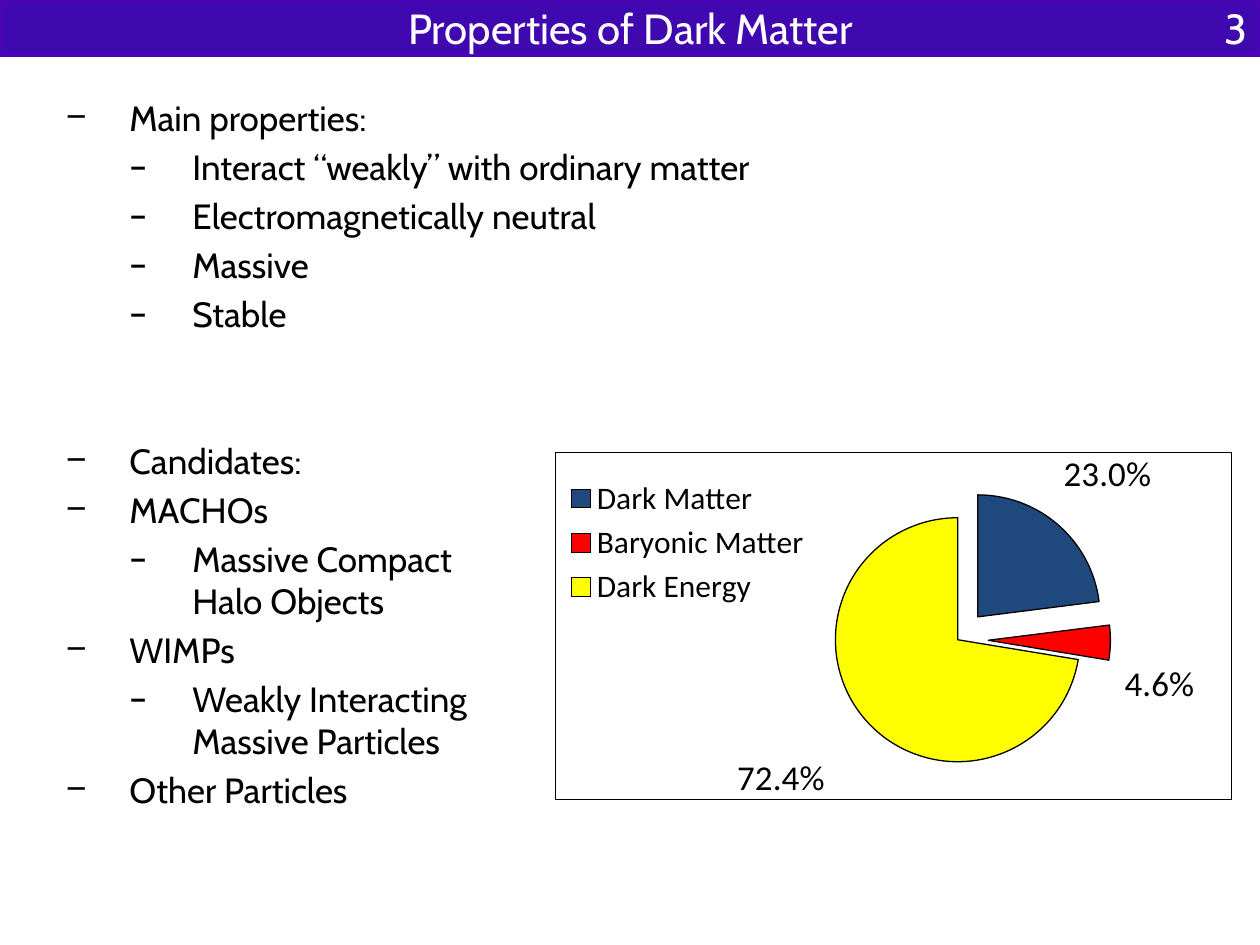
from lxml import etree
from pptx import Presentation, util as u
from pptx.chart.data import CategoryChartData
from pptx.dml.color import RGBColor
from pptx.enum import chart as ch, shapes, text
from pptx.oxml import parse_xml
from pptx.oxml.ns import nsdecls, qn

PX = 914400 // 126
C = {"bar": "4009AF", "edge": "4B03B5", "white": "FFFFFF", "black": "000000",
     "matter": "1F497D", "baryonic": "FF0000", "energy": "FFFF00"}


def add_text(box, lines, size, color, align, anchor=text.MSO_ANCHOR.TOP):
    """Text box from (level, text) pairs; level None means no bullet."""
    tf = s.shapes.add_textbox(*[v * PX for v in box]).text_frame
    tf.word_wrap = True
    tf.vertical_anchor = anchor
    for i, (level, line) in enumerate(lines):
        p = tf.paragraphs[0] if i == 0 else tf.add_paragraph()
        p.text = line
        p.alignment = align
        if i:
            p.space_before = u.Pt(4)
        if level is not None:
            p.level = level
            pPr = p._p.get_or_add_pPr()
            pPr.set("marL", str(u.Inches(0.5 * (level + 1))))
            pPr.set("indent", str(u.Inches(-0.5)))
            etree.SubElement(pPr, qn("a:buFont")).set("typeface", "Cabin")
            etree.SubElement(pPr, qn("a:buChar")).set("char", "‒–"[level])
        font = p.runs[0].font
        font.name, font.size = "Cabin", u.Pt(size)
        font.color.rgb = RGBColor.from_string(C[color])


def layout(**values):
    """Manual layout element for a part of the chart."""
    tags = "".join(f'<c:{k} val="{v}"/>' for k, v in values.items())
    return parse_xml(f'<c:layout {nsdecls("c")}><c:manualLayout>{tags}'
                     '</c:manualLayout></c:layout>')


prs = Presentation()
prs.slide_width, prs.slide_height = u.Inches(10), u.Inches(7.5)
s = prs.slides.add_slide(prs.slide_layouts[6])

# Title bar
bar = s.shapes.add_shape(shapes.MSO_SHAPE.RECTANGLE, 0, 0, prs.slide_width, 55 * PX)
bar.shadow.inherit = False
bar.fill.solid()
bar.fill.fore_color.rgb = RGBColor.from_string(C["bar"])
bar.line.color.rgb = RGBColor.from_string(C["edge"])
bar.line.width = u.Pt(2)
add_text((1, -4, 1259, 56), [(None, "Properties of Dark Matter")], 24, "white",
         text.PP_ALIGN.CENTER)

# Pie chart
data = CategoryChartData(number_format="0.0%")
data.categories = ["Dark Matter", "Baryonic Matter", "Dark Energy"]
data.add_series("Series 1", (0.23, 0.046, 0.724))
chart = s.shapes.add_chart(ch.XL_CHART_TYPE.PIE, 555 * PX, 452 * PX, 677 * PX, 348 * PX,
                           data).chart
chart.has_title = False
chart.font.name, chart.font.size = "Calibri", u.Pt(10)
chart.font.color.rgb = RGBColor.from_string(C["black"])
chart.has_legend = True
chart.legend.position = ch.XL_LEGEND_POSITION.RIGHT
chart.legend.include_in_layout = False
chart.legend.font.size = u.Pt(18)
plot = chart.plots[0]
plot.vary_by_categories = True
series = plot.series[0]
labels = series.data_labels
labels.show_value = True
labels.number_format, labels.number_format_is_linked = "0.0%", False
labels.position = ch.XL_LABEL_POSITION.OUTSIDE_END
labels.font.size = u.Pt(20)
for leader in labels._element.findall(qn("c:showLeaderLines")):
    leader.set("val", "0")

# Slices: colour, explosion, label offset
slices = [("matter", 25, 0, -0.09), ("baryonic", 25, 0.01, 0.12), ("energy", 0, -0.05, 0.12)]
for i, (color, explosion, dx, dy) in enumerate(slices):
    point = series.points[i]
    point.format.fill.solid()
    point.format.fill.fore_color.rgb = RGBColor.from_string(C[color])
    point.format.line.color.rgb = RGBColor.from_string(C["black"])
    point.format.line.width = u.Pt(0.75)
    label = point.data_label
    label.font.size = u.Pt(20)
    label.position = ch.XL_LABEL_POSITION.OUTSIDE_END
    idx = labels._element.findall(qn("c:dLbl"))[i].find(qn("c:idx"))
    idx.addnext(parse_xml(f'<c:numFmt {nsdecls("c")} formatCode="0.0%" sourceLinked="0"/>'))
    idx.addnext(layout(x=dx, y=dy))
    dPt = series._element.findall(qn("c:dPt"))[i]
    dPt.find(qn("c:spPr")).addprevious(
        parse_xml(f'<c:explosion {nsdecls("c")} val="{explosion}"/>'))

# The series explosion leaves room for the slices pulled out
series._element.find(qn("c:dPt")).addprevious(
    parse_xml(f'<c:explosion {nsdecls("c")} val="25"/>'))

# Plot and legend places, chart border
area = chart._chartSpace.chart.plotArea
for old in area.findall(qn("c:layout")):
    area.remove(old)
area.insert(0, layout(layoutTarget="inner", xMode="edge", yMode="edge",
                      x=0.23, y=0.1, w=0.73, h=0.88))
legend = chart.legend._element
for old in legend.findall(qn("c:layout")):
    legend.remove(old)
legend.find(qn("c:legendPos")).addnext(
    layout(xMode="edge", yMode="edge", x=0.01, y=0.06, w=0.37, h=0.4))
chart._chartSpace.find(qn("c:txPr")).addprevious(parse_xml(
    f'<c:spPr {nsdecls("c", "a")}><a:noFill/><a:ln w="9525"><a:solidFill>'
    f'<a:srgbClr val="{C["black"]}"/></a:solidFill></a:ln></c:spPr>'))

# Bulleted lists
properties = [(0, "Main properties:"), (1, "Interact “weakly” with ordinary matter"),
              (1, "Electromagnetically neutral"), (1, "Massive"), (1, "Stable")]
candidates = [(0, "Candidates:"), (0, "MACHOs"), (1, "Massive Compact Halo Objects"),
              (0, "WIMPs"), (1, "Weakly Interacting Massive Particles"),
              (0, "Other Particles")]
add_text((54, 90, 1131, 277), properties, 20, "black", text.PP_ALIGN.LEFT)
add_text((54, 433, 486, 407), candidates, 20, "black", text.PP_ALIGN.LEFT)

# Slide number
add_text((966, 0, 294, 56), [(None, "3")], 24, "white", text.PP_ALIGN.RIGHT,
         text.MSO_ANCHOR.MIDDLE)

prs.save("out.pptx")
